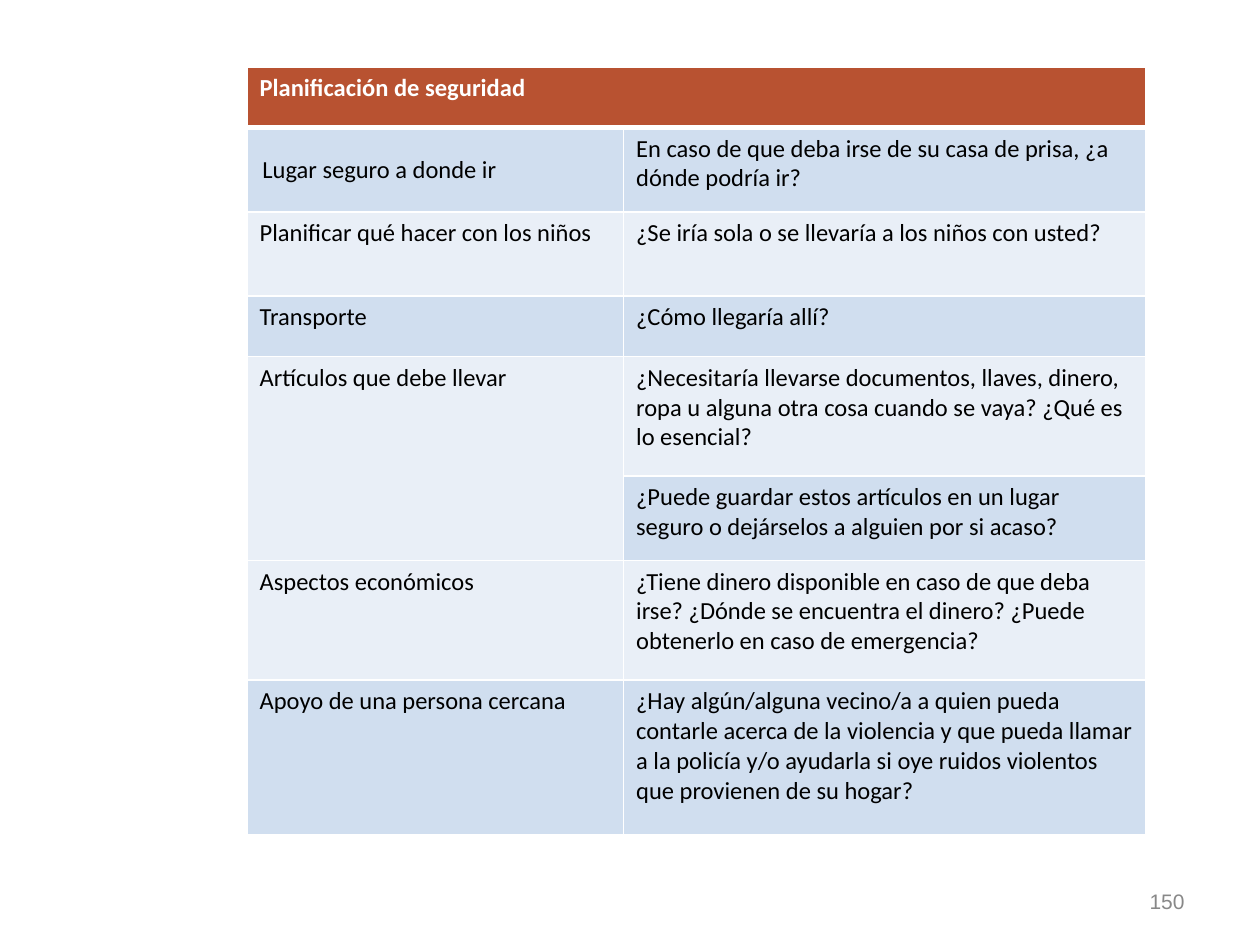
from dataclasses import dataclass

from lxml.etree import fromstring
from pptx import Presentation
from pptx.dml.color import RGBColor as Rgb
from pptx.enum.text import MSO_ANCHOR as Anchor, PP_ALIGN as Align
from pptx.oxml.ns import nsdecls
from pptx.util import Cm, Pt


@dataclass(frozen=True)
class Theme:
    """Colours, fonts and type sizes of the slide."""
    head: str = "B85231"
    bands: tuple = ("D0DEEF", "E9EFF7")
    rule: str = "FFFFFF"
    light: str = "FFFFFF"
    text: str = "000000"
    muted: str = "888888"
    body: str = "Calibri"
    foot: str = "Arial"
    size: int = 14
    small: int = 12


THEME = Theme()
TITLE = "Planificación de seguridad"
COLS = (7.59, 10.52)
ROWS = (
    (1.7, "Lugar seguro a donde ir",
     "En caso de que deba irse de su casa de prisa, ¿a dónde podría ir?"),
    (1.7, "Planificar qué hacer con los niños",
     "¿Se iría sola o se llevaría a los niños con usted?"),
    (1.22, "Transporte", "¿Cómo llegaría allí?"),
    (2.41, "Artículos que debe llevar",
     "¿Necesitaría llevarse documentos, llaves, dinero, ropa u alguna otra "
     "cosa cuando se vaya? ¿Qué es lo esencial?"),
    (1.7, "",
     "¿Puede guardar estos artículos en un lugar seguro o dejárselos a "
     "alguien por si acaso?"),
    (2.41, "Aspectos económicos",
     "¿Tiene dinero disponible en caso de que deba irse? ¿Dónde se encuentra "
     "el dinero? ¿Puede obtenerlo en caso de emergencia?"),
    (3.12, "Apoyo de una persona cercana",
     "¿Hay algún/alguna vecino/a a quien pueda contarle acerca de la "
     "violencia y que pueda llamar a la policía y/o ayudarla si oye ruidos "
     "violentos que provienen de su hogar?"),
)


def style(para, font, size, color, bold=False):
    """Set the font of a paragraph."""
    face = para.font
    face.name, face.size, face.bold = font, Pt(size), bold
    face.color.rgb = Rgb.from_string(color)


def edge(cell, top=1, bottom=1):
    """Draw the four borders of a cell, with widths in points."""
    props = cell._tc.get_or_add_tcPr()
    for spot, (side, width) in enumerate(zip("LRTB", (1, 1, top, bottom))):
        props.insert(spot, fromstring(
            f'<a:ln{side} {nsdecls("a")} w="{Pt(width)}"><a:solidFill>'
            f'<a:srgbClr val="{THEME.rule}"/></a:solidFill></a:ln{side}>'))


def put(cell, text, fill, color, bold=False, top=1, bottom=1):
    """Fill a cell and write its text."""
    cell.fill.solid()
    cell.fill.fore_color.rgb = Rgb.from_string(fill)
    edge(cell, top, bottom)
    cell.text = text
    style(cell.text_frame.paragraphs[0], THEME.body, THEME.size, color, bold)


def center(cell):
    """Set a cell's text in the middle, slightly indented."""
    cell.vertical_anchor = Anchor.MIDDLE
    cell.margin_left = cell.margin_right = Cm(0.18)
    cell.margin_top = cell.margin_bottom = 0
    para = cell.text_frame.paragraphs[0]
    para.line_spacing = 0.97
    para._p.get_or_add_pPr().set("marL", str(Cm(0.13)))


def add_plan(slide):
    """Add the safety plan table."""
    highs = [1.22] + [row[0] for row in ROWS]
    table = slide.shapes.add_table(
        len(highs), len(COLS), Cm(4.98), Cm(1.35),
        Cm(sum(COLS)), Cm(sum(highs))).table
    for col, width in zip(table.columns, COLS):
        col.width = Cm(width)
    for row, high in zip(table.rows, highs):
        row.height = Cm(high)
    for col, text in enumerate((TITLE, "")):
        put(table.cell(0, col), text, THEME.head, THEME.light, True, bottom=3)
    for num, (_, *texts) in enumerate(ROWS, 1):
        fill = THEME.bands[(num - 1) % 2]
        for col, text in enumerate(texts):
            put(table.cell(num, col), text, fill, THEME.text,
                top=3 if num == 1 else 1)
    center(table.cell(1, 0))
    table.cell(0, 0).merge(table.cell(0, 1))
    table.cell(4, 0).merge(table.cell(5, 0))


def add_page(slide, number):
    """Add the page number at the lower right."""
    frame = slide.shapes.add_textbox(
        Cm(18.21), Cm(17.65), Cm(5.92), Cm(1.02)).text_frame
    frame.word_wrap = True
    frame.vertical_anchor = Anchor.MIDDLE
    para = frame.paragraphs[0]
    para.text = number
    para.alignment = Align.RIGHT
    style(para, THEME.foot, THEME.small, THEME.muted)


def main():
    """Build the slide and save it."""
    deck = Presentation()
    deck.slide_width, deck.slide_height = Cm(25.4), Cm(19.05)
    slide = deck.slides.add_slide(deck.slide_layouts[6])
    add_plan(slide)
    add_page(slide, "150")
    deck.save("out.pptx")


if __name__ == "__main__":
    main()
